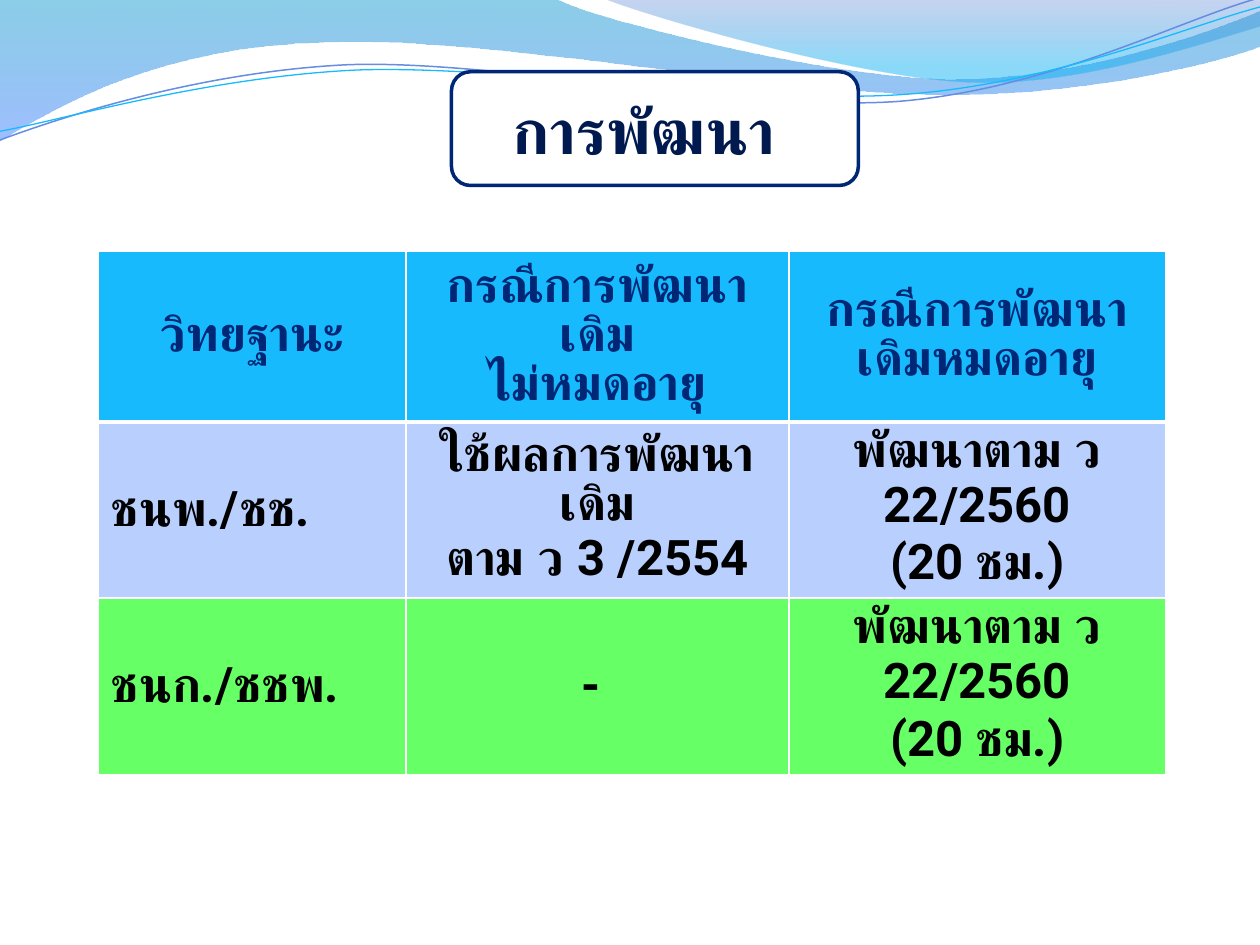
import dataclasses

import pptx
import pptx.dml.color
import pptx.enum.shapes
import pptx.enum.text
import pptx.oxml
import pptx.oxml.ns
import pptx.util

Pt = pptx.util.Pt
ALIGN = pptx.enum.text.PP_ALIGN
ANCHOR = pptx.enum.text.MSO_ANCHOR
qn = pptx.oxml.ns.qn
NS = pptx.oxml.ns.nsdecls("a")


@dataclasses.dataclass(frozen=True)
class Theme:
    font: str = "Roboto"
    title: int = 36
    body: int = 28
    navy: str = "002776"
    ink: str = "001A4F"
    black: str = "000000"
    white: str = "FFFFFF"
    head: str = "17BBFD"
    pale: str = "B9D0FF"
    green: str = "66FF66"
    # gradient stops: position, colour, percent opacity
    deep: tuple = ((0, "0092CC", 45), (1, "5089FF", 55))
    light: tuple = ((0, "4571CC", 30), (0.8, "00AEF4", 45))
    blue: str = "658DE1"
    cyan: str = "17BBFD"


def color(code):
    return pptx.dml.color.RGBColor.from_string(code)


class Page:
    def __init__(self, deck, theme):
        self.theme = theme
        self.slide = deck.slides.add_slide(deck.slide_layouts[5])
        self.shapes = self.slide.shapes

    def style(self, frame, size, code, align):
        for para in frame.paragraphs:
            para.alignment = align
            for run in para.runs:
                font = run.font
                font.name, font.size, font.bold = self.theme.font, Pt(size), True
                font.color.rgb = color(code)

    def free(self, start, steps, close):
        """Join line steps (x, y) and Bezier steps (six numbers)."""
        ends = [(Pt(x), Pt(y)) for x, y in [start] + [s[-2:] for s in steps]]
        pen = self.shapes.build_freeform(*ends[0])
        pen.add_line_segments(ends[1:], close=close)
        shape = pen.convert_to_shape()
        shape.shadow.inherit = False
        lines = list(shape._element.iter(qn("a:lnTo")))
        for line, step in zip(lines, steps):
            if len(step) == 6:
                dots = "".join(
                    f'<a:pt x="{Pt(x) - shape.left}" y="{Pt(y) - shape.top}"/>'
                    for x, y in zip(step[::2], step[1::2]))
                bend = pptx.oxml.parse_xml(
                    f"<a:cubicBezTo {NS}>{dots}</a:cubicBezTo>")
                line.getparent().replace(line, bend)
        return shape

    def wave(self, start, steps, stops):
        """Draw a closed band with a see-through gradient running down."""
        shape = self.free(start, steps, True)
        shape.line.fill.background()
        shape.fill.gradient()
        shape.fill.gradient_angle = 270
        for stop, (place, code, alpha) in zip(shape.fill.gradient_stops, stops):
            stop.position = place
            stop.color.rgb = color(code)
        tones = shape._element.spPr.iter(qn("a:srgbClr"))
        for tone, (place, code, alpha) in zip(tones, stops):
            tone.append(pptx.oxml.parse_xml(
                f'<a:alpha {NS} val="{alpha * 1000}"/>'))

    def curve(self, start, steps, code, width):
        shape = self.free(start, steps, False)
        shape.fill.background()
        shape.line.color.rgb = color(code)
        shape.line.width = Pt(width)

    def frame(self, left, top, width, height):
        shape = self.shapes.add_shape(
            pptx.enum.shapes.MSO_SHAPE.ROUNDED_RECTANGLE,
            Pt(left), Pt(top), Pt(width), Pt(height))
        shape.shadow.inherit = False
        shape.fill.solid()
        shape.fill.fore_color.rgb = color(self.theme.white)
        shape.line.color.rgb = color(self.theme.navy)
        shape.line.width = Pt(2)

    def title(self, text, left, top, width, height):
        shape = self.shapes.title
        shape.left, shape.top = Pt(left), Pt(top)
        shape.width, shape.height = Pt(width), Pt(height)
        frame = shape.text_frame
        frame.text = text
        frame.margin_left = frame.margin_top = frame.margin_bottom = 0
        frame.margin_right = Pt(1.4)
        frame.vertical_anchor = ANCHOR.TOP
        self.style(frame, self.theme.title, self.theme.ink, ALIGN.CENTER)
        for run in frame.paragraphs[0].runs:
            run.font._element.append(pptx.oxml.parse_xml(
                f'<a:cs {NS} typeface="{self.theme.font}"/>'))
        self.shapes._spTree.append(shape._element)  # bring in front of its frame

    def border(self, cell, low):
        """Rule a cell in white, with its own width for the lower edge."""
        props = cell._tc.get_or_add_tcPr()
        for i, (side, width) in enumerate(zip("LRTB", (1, 1, 1, low))):
            props.insert(i, pptx.oxml.parse_xml(
                f'<a:ln{side} {NS} w="{Pt(width)}"><a:solidFill>'
                f'<a:srgbClr val="{self.theme.white}"/></a:solidFill></a:ln{side}>'))

    def table(self, left, top, widths, heights, rows, fills):
        table = self.shapes.add_table(
            len(heights), len(widths), Pt(left), Pt(top),
            Pt(sum(widths)), Pt(sum(heights))).table
        table.horz_banding = False
        for col, width in zip(table.columns, widths):
            col.width = Pt(width)
        for i, (row, height) in enumerate(zip(table.rows, heights)):
            row.height = Pt(height)
            code = self.theme.black if i else self.theme.navy
            for j, cell in enumerate(row.cells):
                cell.text_frame.text = rows[i][j]
                cell.vertical_anchor = ANCHOR.MIDDLE
                cell.fill.solid()
                cell.fill.fore_color.rgb = color(fills[i])
                align = ALIGN.LEFT if i and not j else ALIGN.CENTER
                self.style(cell.text_frame, self.theme.body, code, align)
                if not i:
                    self.border(cell, 3)


def main():
    deck = pptx.Presentation()
    deck.slide_width, deck.slide_height = Pt(720), Pt(540)
    theme = Theme()
    page = Page(deck, theme)

    page.wave((0, 0), [(317, -1), (343, 12, 478, 45, 546, 45),
                       (614, 45, 690, 19, 720, 6), (721, 26),
                       (708, 32, 626, 55, 537, 54), (448, 54, 275, 20, 185, 24),
                       (93, 26, 33, 60, -1, 81)], theme.deep)
    page.wave((345, -1), [(366, 8, 491, 45, 554, 47),
                          (616, 50, 692, 23, 720, 15), (720, 0)], theme.light)
    page.curve((0, 80), [(35, 67, 114, 41, 199, 37), (284, 34, 427, 64, 513, 58),
                         (600, 51, 675, 11, 719, -1)], theme.blue, 0.85)
    page.curve((0, 75), [(34, 69, 118, 44, 204, 40), (290, 37, 430, 60, 516, 54),
                         (602, 48, 678, 15, 720, 4)], theme.cyan, 0.75)

    fresh = "พัฒนาตาม ว 22/2560\n(20 ชม.)"
    rows = [
        ["วิทยฐานะ", "กรณีการพัฒนาเดิม\vไม่หมดอายุ", "กรณีการพัฒนาเดิมหมดอายุ"],
        ["ชนพ./ชช.", "ใช้ผลการพัฒนาเดิม\nตาม ว 3 /2554", fresh],
        ["ชนก./ชชพ.", "- ", fresh],
    ]
    page.table(56.2, 143.5, [175.7, 218.9, 215.3], [97.6, 85.5, 85], rows,
               [theme.head, theme.pale, theme.green])

    page.frame(258, 41, 232.5, 65)
    page.title("การพัฒนา", 105, 52.5, 527, 65)
    deck.save("out.pptx")


if __name__ == "__main__":
    main()
